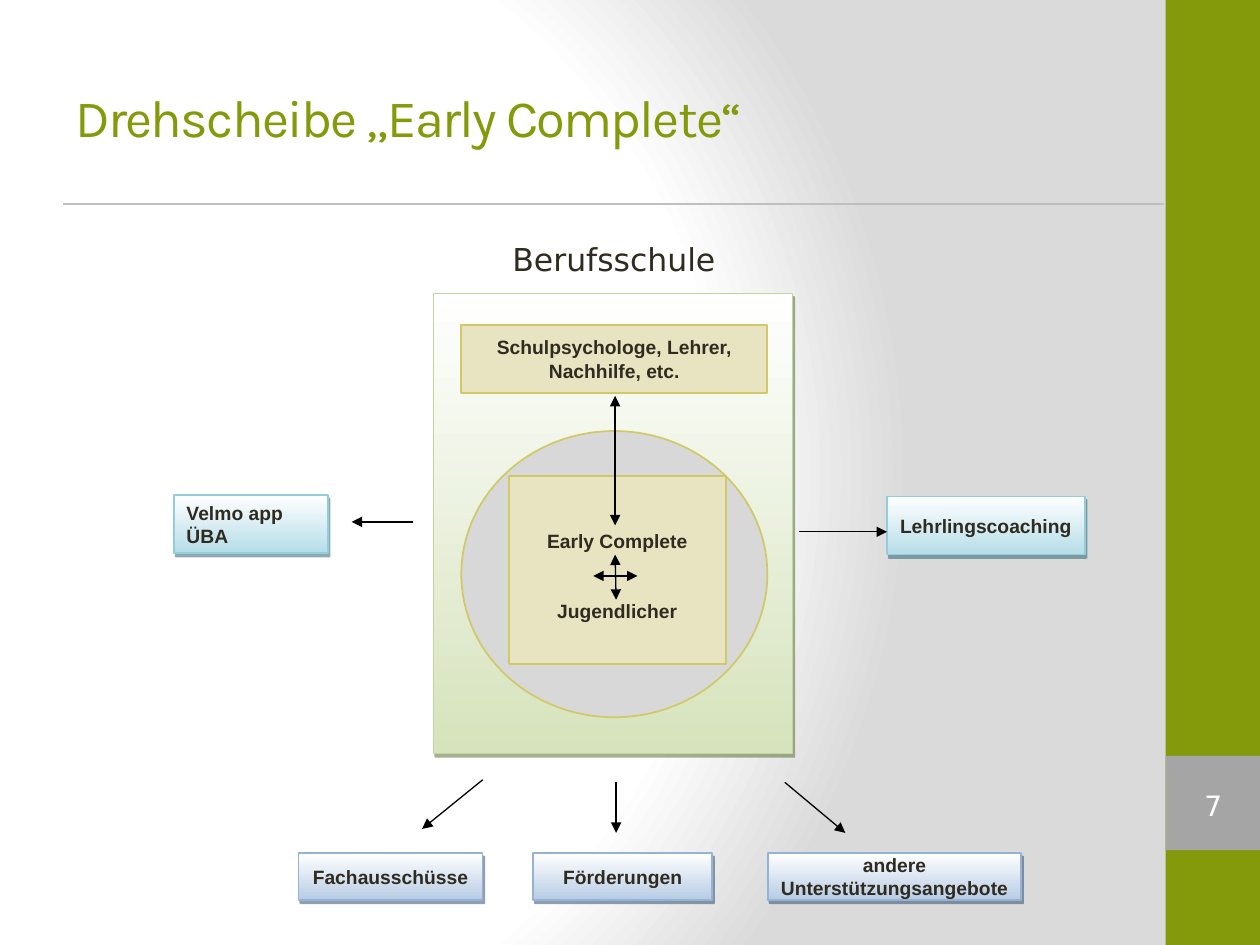
from lxml import etree
from pptx import Presentation
from pptx.dml.color import RGBColor as RGB
from pptx.enum.shapes import MSO_CONNECTOR as LINK, MSO_SHAPE as SHAPE
from pptx.enum.text import MSO_ANCHOR as ANCHOR, PP_ALIGN as ALIGN
from pptx.oxml import parse_xml
from pptx.oxml.ns import nsdecls, qn
from pptx.util import Cm, Pt

WHITE = RGB(0xFF, 0xFF, 0xFF)
BLACK = RGB(0, 0, 0)
INK = RGB(0x2F, 0x2B, 0x20)
OLIVE = RGB(0x84, 0x9A, 0x0A)
GRAY = RGB(0xA5, 0xA5, 0xA5)
RULE = RGB(0xBF, 0xBF, 0xBF)
DISC = RGB(0xD8, 0xD8, 0xD8)
SAND = RGB(0xE8, 0xE4, 0xC1)
GOLD = RGB(0xD0, 0xC9, 0x67)
# Gradient end, outline and shadow of each box family
GREEN = RGB(0xD6, 0xE3, 0xBC), RGB(0xC2, 0xD6, 0x9B), RGB(0x4E, 0x61, 0x28)
TEAL = RGB(0xB6, 0xDD, 0xE8), RGB(0x92, 0xCD, 0xDC), RGB(0x20, 0x58, 0x67)
BLUE = RGB(0xB8, 0xCC, 0xE4), RGB(0x95, 0xB3, 0xD7), RGB(0x24, 0x3F, 0x60)

LABEL = {"name": "Arial", "size": Pt(11), "bold": True}
PLAIN = {"name": "DejaVu Sans", "size": Pt(18), "bold": False}
NUMBER = {"name": "DejaVu Sans", "size": Pt(16), "bold": False}
HEAD = {"name": "Karla", "size": Pt(30), "bold": False}

deck = Presentation()
deck.slide_width, deck.slide_height = Cm(25.4), Cm(19.05)
slide = deck.slides.add_slide(deck.slide_layouts[5])
shapes = slide.shapes


def write(shape, lines, font, color=INK, align=ALIGN.CENTER, anchor=ANCHOR.MIDDLE):
    frame = shape.text_frame
    frame.text = "\n".join(lines)
    frame.word_wrap = True
    frame.vertical_anchor = anchor
    for para in frame.paragraphs:
        para.alignment = align
        for key, value in font.items():
            setattr(para.font, key, value)
            setattr(para.runs[0].font, key, value)
        para.runs[0].font.color.rgb = color
    return frame


def draw(kind, at, fill=None, line=None, family=None):
    shape = shapes.add_shape(kind, *map(Cm, at))
    shape.shadow.inherit = False
    if family:
        end, line, shade = family
        shape.fill.gradient()
        shape.fill.gradient_angle = 270
        for stop, color in zip(shape.fill.gradient_stops, (WHITE, end)):
            stop.color.rgb = color
        effect = shape._element.spPr.find(qn("a:effectLst"))
        effect.append(parse_xml(
            f'<a:outerShdw {nsdecls("a")} dist="28000" dir="3800000" algn="ctr" '
            f'rotWithShape="0"><a:srgbClr val="{shade}"><a:alpha val="50000"/>'
            '</a:srgbClr></a:outerShdw>'))
    elif fill:
        shape.fill.solid()
        shape.fill.fore_color.rgb = fill
    else:
        shape.fill.background()
    if line:
        shape.line.color.rgb = line
        shape.line.width = Pt(1)
    else:
        shape.line.fill.background()
    return shape


# Background: white glow fading to gray
stops = "".join(f'<a:gs pos="{pos}"><a:srgbClr val="{color}"/></a:gs>'
                for pos, color in ((0, "FFFFFF"), (75000, "FFFFFF"), (100000, "DADADA")))
slide._element.cSld.insert(0, parse_xml(
    f'<p:bg {nsdecls("p", "a")}><p:bgPr><a:gradFill rotWithShape="1"><a:gsLst>{stops}</a:gsLst>'
    '<a:path path="circle"><a:fillToRect l="20000" t="50000" r="100000" b="50000"/></a:path>'
    '</a:gradFill><a:effectLst/></p:bgPr></p:bg>'))

# Side bar and page number
draw(SHAPE.RECTANGLE, (23.5, 0, 1.9, 19.05), OLIVE)
draw(SHAPE.RECTANGLE, (23.5, 15.24, 1.9, 1.9), GRAY)
page = draw(SHAPE.DOUBLE_BRACKET, (23.7, 15.7, 1.52, 1.09))
page.adjustments[0] = 0.18
frame = write(page, ["7"], NUMBER, WHITE)
for side in ("left", "top", "right", "bottom"):
    setattr(frame, f"margin_{side}", 0)

# Title
title = shapes.title
spot = {"left": 1.27, "top": 0.76, "width": 21.16, "height": 3.18}
for key, value in spot.items():
    setattr(title, key, Cm(value))
frame = write(title, ["Drehscheibe „Early Complete“"], HEAD, OLIVE, ALIGN.LEFT)
frame.paragraphs[0].runs[0]._r.get_or_add_rPr().set("spc", "-100")

# School: frame, disc and inner boxes
school = shapes.add_textbox(Cm(10.08), Cm(4.72), Cm(4.62), Cm(1.02))
write(school, ["Berufsschule"], PLAIN, align=ALIGN.LEFT, anchor=ANCHOR.TOP).word_wrap = False
draw(SHAPE.RECTANGLE, (8.74, 5.92, 7.24, 9.27), family=GREEN)
draw(SHAPE.OVAL, (9.3, 8.69, 6.17, 5.77), DISC, GOLD)
staff = draw(SHAPE.RECTANGLE, (9.3, 6.55, 6.17, 1.37), SAND, GOLD)
write(staff, ["Schulpsychologe, Lehrer, Nachhilfe, etc."], LABEL)
core = draw(SHAPE.RECTANGLE, (10.26, 9.6, 4.37, 3.78), SAND, GOLD)
frame = write(core, ["Early Complete", "Jugendlicher"], LABEL, anchor=ANCHOR.TOP)
frame.margin_top = Cm(1.06)
frame.paragraphs[1].space_before = Pt(27)

# Partners left and right
coach = draw(SHAPE.RECTANGLE, (17.88, 10.01, 3.99, 1.17), family=TEAL)
write(coach, ["Lehrlingscoaching"], LABEL)
app = draw(SHAPE.RECTANGLE, (3.51, 9.98, 3.1, 1.17), family=TEAL)
write(app, ["Velmo app", "ÜBA"], LABEL, align=ALIGN.LEFT, anchor=ANCHOR.TOP)

# Offers along the bottom
offers = (("Fachausschüsse", 3.71), ("Förderungen", 3.61),
          ("andere Unterstützungsangebote", 5.11))
for col, (text, width) in enumerate(offers):
    box = draw(SHAPE.RECTANGLE, (6.02 + 4.73 * col, 17.2, width, 0.94), family=BLUE)
    write(box, [text], LABEL)

# Rule and arrows: ends, color, width, arrowheads
ONE, BOTH = ("tailEnd",), ("headEnd", "tailEnd")
links = (
    ((1.27, 4.11, 23.47, 4.11), RULE, 1.5, ()),
    ((8.33, 10.52, 7.09, 10.52), BLACK, 0.75, ONE),
    ((16.1, 10.72, 17.88, 10.72), BLACK, 0.75, ONE),
    ((9.73, 15.72, 8.51, 16.71), BLACK, 0.75, ONE),
    ((12.42, 15.77, 12.42, 16.79), BLACK, 0.75, ONE),
    ((15.82, 15.77, 17.04, 16.79), BLACK, 0.75, ONE),
    ((12.4, 7.98, 12.4, 10.59), BLACK, 0.75, BOTH),
    ((12.4, 11.18, 12.42, 12.09), BLACK, 0.75, BOTH),
    ((12.85, 11.61, 11.96, 11.61), BLACK, 0.75, BOTH),
)
for ends, color, width, tips in links:
    link = shapes.add_connector(LINK.STRAIGHT, *map(Cm, ends))
    link.line.color.rgb = color
    link.line.width = Pt(width)
    for tip in tips:
        etree.SubElement(link.line._get_or_add_ln(), qn(f"a:{tip}"), type="triangle")
    etree.SubElement(link._element.spPr, qn("a:effectLst"))

deck.save("out.pptx")
